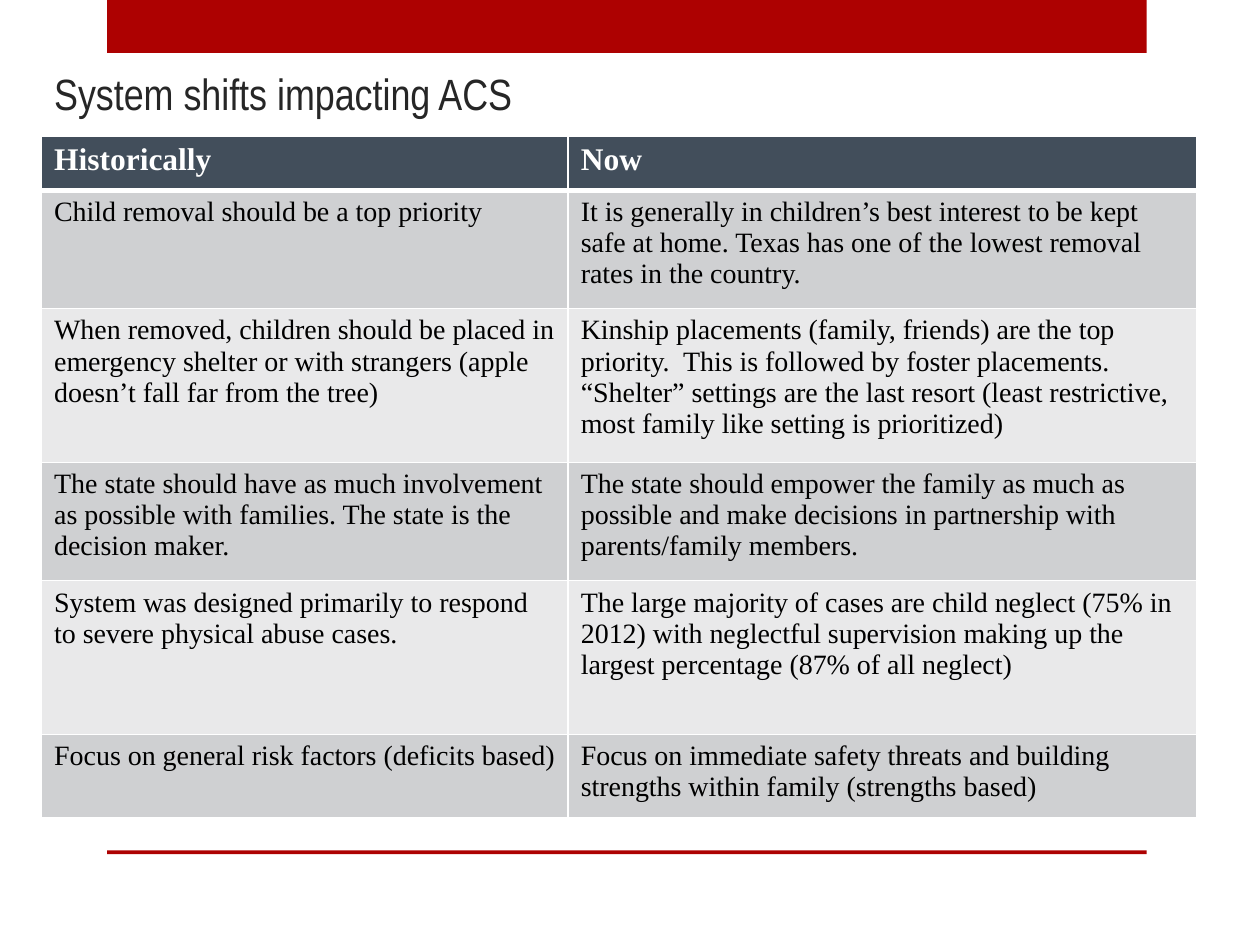
from lxml.etree import SubElement
from pptx import Presentation
from pptx.dml.color import RGBColor
from pptx.enum.shapes import MSO_SHAPE
from pptx.enum.text import MSO_ANCHOR, PP_ALIGN
from pptx.oxml.ns import qn
from pptx.util import Inches, Pt

RED, SLATE, WHITE = "AD0101", "424E5B", "FFFFFF"
BANDS = ["CFD0D2", "E9E9EA"]
COL_WIDTHS = [4.18, 4.99]
ROW_HEIGHTS = [0.43, 0.94, 1.22, 0.94, 1.22, 0.66]
ROWS = [
    ("Historically", "Now"),
    ("Child removal should be a top priority",
     "It is generally in children’s best interest to be kept safe at home. "
     "Texas has one of the lowest removal rates in the country."),
    ("When removed, children should be placed in emergency shelter or with "
     "strangers (apple doesn’t fall far from the tree)",
     "Kinship placements (family, friends) are the top priority.  This is "
     "followed by foster placements. “Shelter” settings are the last resort "
     "(least restrictive, most family like setting is prioritized)"),
    ("The state should have as much involvement as possible with families. "
     "The state is the decision maker.",
     "The state should empower the family as much as possible and make "
     "decisions in partnership with parents/family members."),
    ("System was designed primarily to respond to severe physical abuse cases.",
     "The large majority of cases are child neglect (75% in 2012) with "
     "neglectful supervision making up the largest percentage "
     "(87% of all neglect)"),
    ("Focus on general risk factors (deficits based)",
     "Focus on immediate safety threats and building strengths within family "
     "(strengths based)"),
]


def rgb(value):
    return RGBColor.from_string(value)


def write(tf, text, size, font="Times New Roman", color="000000", bold=False):
    p = tf.paragraphs[0]
    p.alignment = PP_ALIGN.LEFT
    r = p.add_run()
    r.text = text
    r.font.size = Pt(size)
    r.font.name = font
    r.font.bold = bold
    r.font.color.rgb = rgb(color)


def add_bar(s, top, height):
    bar = s.shapes.add_shape(MSO_SHAPE.RECTANGLE, Inches(0.85), Inches(top),
                             Inches(8.25), Inches(height))
    bar.shadow.inherit = False
    bar.fill.solid()
    bar.fill.fore_color.rgb = rgb(RED)
    bar.line.fill.background()


def add_title(s, text):
    title = s.shapes.title
    title.left, title.top = Inches(0.33), Inches(0.33)
    title.width, title.height = Inches(9.08), Inches(0.67)
    title.text_frame.vertical_anchor = MSO_ANCHOR.BOTTOM
    write(title.text_frame, text, 25, font="Arial Narrow", color="262626")


def set_borders(cell, **widths):
    """Draw white borders; widths are points keyed by side: L, R, T, B."""
    tc_pr = cell._tc.get_or_add_tcPr()
    for side, width in widths.items():
        ln = SubElement(tc_pr, qn(f"a:ln{side}"), w=str(Pt(width)))
        fill = SubElement(ln, qn("a:solidFill"))
        SubElement(fill, qn("a:srgbClr"), val=WHITE)


def add_comparison(s):
    table = s.shapes.add_table(
        len(ROWS), len(COL_WIDTHS), Inches(0.33), Inches(1.08),
        Inches(sum(COL_WIDTHS)), Inches(sum(ROW_HEIGHTS))).table
    for column, width in zip(table.columns, COL_WIDTHS):
        column.width = Inches(width)
    for i, texts in enumerate(ROWS):
        table.rows[i].height = Inches(ROW_HEIGHTS[i])
        header = i == 0
        for j, text in enumerate(texts):
            cell = table.cell(i, j)
            set_borders(cell, L=1, R=1, T=3 if i == 1 else 1,
                        B=3 if header else 1)
            cell.fill.solid()
            cell.fill.fore_color.rgb = rgb(SLATE if header
                                           else BANDS[(i - 1) % 2])
            if header:
                write(cell.text_frame, text, 18, color=WHITE, bold=True)
            else:
                write(cell.text_frame, text, 16)


def main():
    prs = Presentation()
    prs.slide_width, prs.slide_height = Inches(10), Inches(7.5)
    s = prs.slides.add_slide(prs.slide_layouts[5])
    add_bar(s, 0, 0.42)
    add_bar(s, 6.75, 0.03)
    add_title(s, "System shifts impacting ACS")
    add_comparison(s)
    prs.save("out.pptx")


if __name__ == "__main__":
    main()
